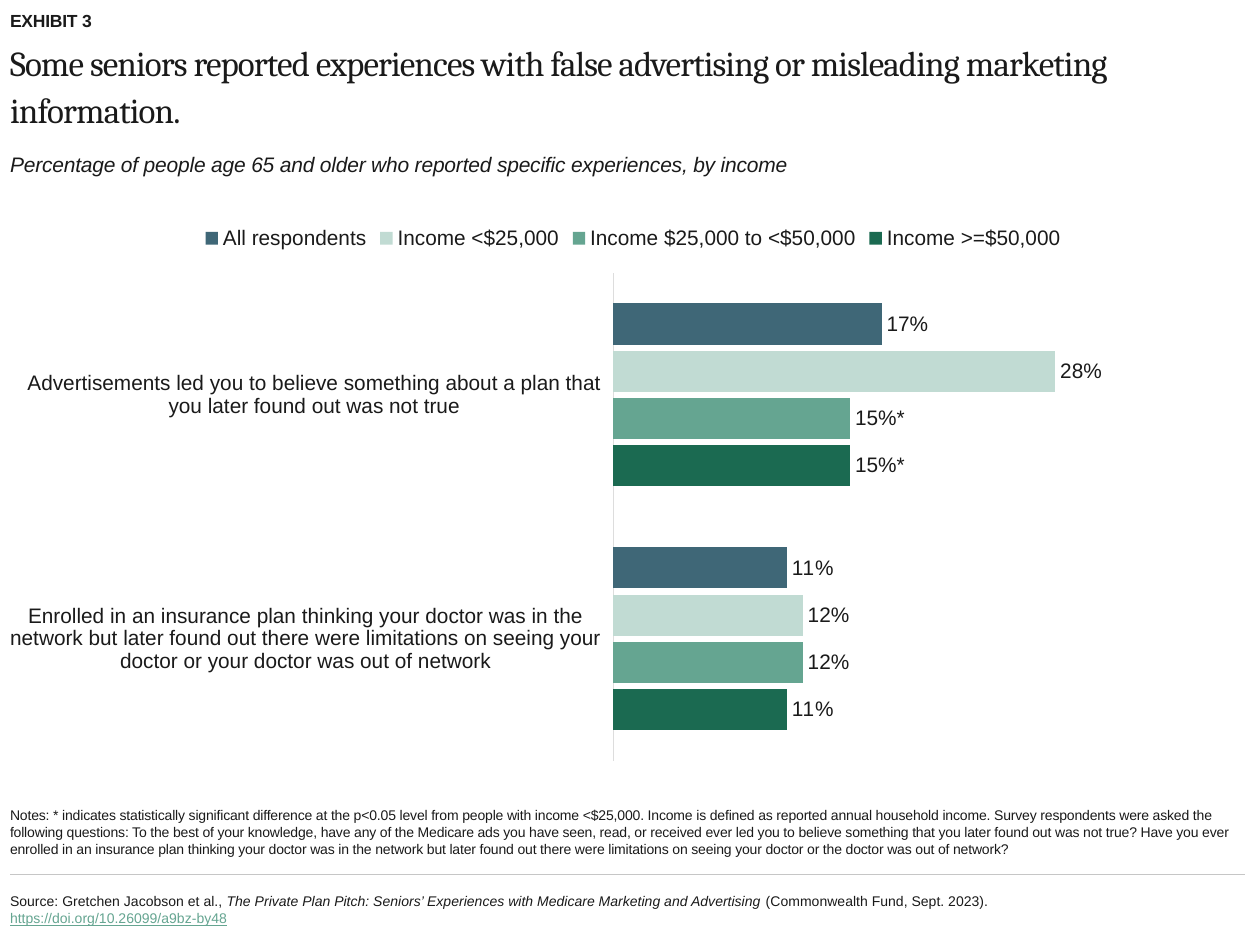
from dataclasses import dataclass

from lxml import etree
from pptx import Presentation
from pptx.chart.data import CategoryChartData
from pptx.dml.color import RGBColor
from pptx.enum.chart import (
    XL_CHART_TYPE as ChartType,
    XL_LABEL_POSITION as LabelPos,
    XL_LEGEND_POSITION as LegendPos,
    XL_TICK_LABEL_POSITION as TickLabel,
    XL_TICK_MARK as TickMark,
)
from pptx.enum.shapes import MSO_CONNECTOR as Connector
from pptx.enum.text import MSO_ANCHOR as Anchor, MSO_AUTO_SIZE as AutoSize, PP_ALIGN as Align
from pptx.oxml import parse_xml
from pptx.oxml.ns import nsdecls, qn
from pptx.util import Pt


@dataclass(frozen=True)
class Theme:
    body: str = "Arial"
    heading: str = "Cambria"
    ink: str = "1A1A1A"
    link: str = "65A591"
    rule: str = "C6C6C6"
    axis: str = "DDDDDD"
    title_size: float = 20
    text_size: float = 12
    tag_size: float = 10
    note_size: float = 8


T = Theme()
LEFT, WIDTH = 5.76, 708.48
CHART_WIDTH = 705.6

CATEGORIES = [
    "Enrolled in an insurance plan thinking your doctor was in the network but later "
    "found out there were limitations on seeing your doctor or your doctor was out of network",
    "Advertisements led you to believe something about a plan that you later found out was not true",
]
# Name, values, colour, labels that replace the value by point index
SERIES = [
    ("Income >=$50,000", (0.11, 0.15), "1B6A51", {1: "15%*"}),
    ("Income $25,000 to <$50,000", (0.12, 0.15), "65A591", {1: "15%*"}),
    ("Income <$25,000", (0.12, 0.28), "C1DBD3", {}),
    ("All respondents", (0.11, 0.17), "3F6777", {}),
]
NOTES = (
    "Notes: * indicates statistically significant difference at the p<0.05 level from people "
    "with income <$25,000. Income is defined as reported annual household income. Survey "
    "respondents were asked the following questions: To the best of your knowledge, have any of "
    "the Medicare ads you have seen, read, or received ever led you to believe something that you "
    "later found out was not true? Have you ever enrolled in an insurance plan thinking your "
    "doctor was in the network but later found out there were limitations on seeing your doctor "
    "or the doctor was out of network?"
)


def rgb(value):
    return RGBColor.from_string(value)


def style_font(font, size=T.text_size, name=T.body, color=T.ink, bold=False,
               italic=False, underline=False):
    font.size, font.name = Pt(size), name
    font.bold, font.italic, font.underline = bold, italic, underline
    font.color.rgb = rgb(color)


def add_run(p, text, spacing=0, **fmt):
    """Add formatted text; spacing is the letter spacing in points."""
    r = p.add_run()
    r.text = text
    style_font(r.font, **fmt)
    if spacing:
        r._r.get_or_add_rPr().set("spc", str(round(spacing * 100)))


def prepare_frame(sp, box, anchor=Anchor.TOP):
    sp.left, sp.top, sp.width, sp.height = map(Pt, box)
    tf = sp.text_frame
    tf.word_wrap, tf.auto_size = True, AutoSize.NONE
    tf.vertical_anchor = anchor
    tf.margin_left = tf.margin_top = tf.margin_right = tf.margin_bottom = 0
    p = tf.paragraphs[0]
    p.alignment = Align.LEFT
    return p


def add_text(slide, box, text, anchor=Anchor.TOP, **fmt):
    sp = slide.shapes.add_textbox(*map(Pt, box))
    p = prepare_frame(sp, box, anchor)
    if text:
        add_run(p, text, **fmt)
    return p


def add_header(slide, left, top, width):
    # Exhibit tag, title and subtitle
    add_text(slide, (left, top, width, 14.4), "EXHIBIT 3",
             size=T.tag_size, bold=True, spacing=-0.1)
    p = prepare_frame(slide.shapes.title, (left, top + 15.84, width, 54))
    p.line_spacing = 1.1
    add_run(p, "Some seniors reported experiences with false advertising or "
               "misleading marketing information.",
            size=T.title_size, name=T.heading, spacing=-0.5)
    add_text(slide, (left, top + 80.64, width, 18),
             "Percentage of people age 65 and older who reported specific experiences, by income",
             italic=True, spacing=-0.1)


def set_plot_layout(chart, x, y, w, h):
    """Fix the inner plot area as fractions of the chart."""
    area = chart._chartSpace.chart.plotArea
    for old in area.findall(qn("c:layout")):
        area.remove(old)
    values = {"layoutTarget": "inner", "xMode": "edge", "yMode": "edge",
              "x": x, "y": y, "w": w, "h": h}
    parts = "".join(f'<c:{tag} val="{val}"/>' for tag, val in values.items())
    area.insert(0, parse_xml(
        f"<c:layout {nsdecls('c')}><c:manualLayout>{parts}</c:manualLayout></c:layout>"))


def format_series(series, color, point_labels):
    series.format.fill.solid()
    series.format.fill.fore_color.rgb = rgb(color)
    series.invert_if_negative = False
    labels = series.data_labels
    labels.show_value = True
    labels.number_format, labels.number_format_is_linked = "0%", False
    labels.position = LabelPos.OUTSIDE_END
    style_font(labels.font)
    for index, text in point_labels.items():
        label = series.points[index].data_label
        add_run(label.text_frame.paragraphs[0], text)
        label.position = LabelPos.OUTSIDE_END


def add_bar_chart(slide, box):
    data = CategoryChartData(number_format="0%")
    data.categories = CATEGORIES
    for name, values, _, _ in SERIES:
        data.add_series(name, values)
    chart = slide.shapes.add_chart(ChartType.BAR_CLUSTERED, *map(Pt, box), data).chart
    style_font(chart.font, size=T.tag_size)
    chart.has_title = False

    # Legend and plot
    chart.has_legend = True
    chart.legend.position = LegendPos.TOP
    chart.legend.include_in_layout = False
    style_font(chart.legend.font)
    set_plot_layout(chart, 0.484, 0.107, 0.516, 0.872)
    plot = chart.plots[0]
    plot.gap_width, plot.overlap = 150, -15
    plot.vary_by_categories = False
    for series, (_, _, color, point_labels) in zip(plot.series, SERIES):
        format_series(series, color, point_labels)

    # Axes
    cat, val = chart.category_axis, chart.value_axis
    cat.major_tick_mark = cat.minor_tick_mark = TickMark.NONE
    cat.tick_label_position = TickLabel.LOW
    style_font(cat.tick_labels.font)
    cat.format.line.color.rgb = rgb(T.axis)
    cat.format.line.width = Pt(0.75)
    val.minimum_scale, val.maximum_scale = 0, 0.4
    val.has_major_gridlines = False
    val.visible = False


def add_footer(slide, left, top, width):
    # Notes, rule and source
    add_text(slide, (left, top, width, 39.6), NOTES, anchor=Anchor.BOTTOM,
             size=T.note_size, spacing=-0.1)
    y = Pt(top + 49.68)
    rule = slide.shapes.add_connector(Connector.STRAIGHT, Pt(left), y, Pt(left + width), y)
    rule.line.color.rgb = rgb(T.rule)
    rule.line.width = Pt(0.75)
    etree.SubElement(rule._element.spPr, qn("a:effectLst"))
    p = add_text(slide, (left, top + 53.28, 561.6, 33.12), "Source: Gretchen Jacobson et al., ",
                 anchor=Anchor.MIDDLE, size=T.note_size)
    add_run(p, "The Private Plan Pitch: Seniors’ Experiences with Medicare Marketing "
               "and Advertising", size=T.note_size, italic=True)
    add_run(p, " (Commonwealth Fund, Sept. 2023). ", size=T.note_size)
    add_run(p, "https://doi.org/10.26099/a9bz-by48", size=T.note_size,
            color=T.link, underline=True)


def main():
    prs = Presentation()
    prs.slide_width, prs.slide_height = Pt(720), Pt(540)
    slide = prs.slides.add_slide(prs.slide_layouts[5])
    add_header(slide, LEFT, 5.76, WIDTH)
    add_bar_chart(slide, (LEFT, 121.68, CHART_WIDTH, 319.68))
    add_footer(slide, LEFT, 450, CHART_WIDTH)
    prs.save("out.pptx")


if __name__ == "__main__":
    main()
